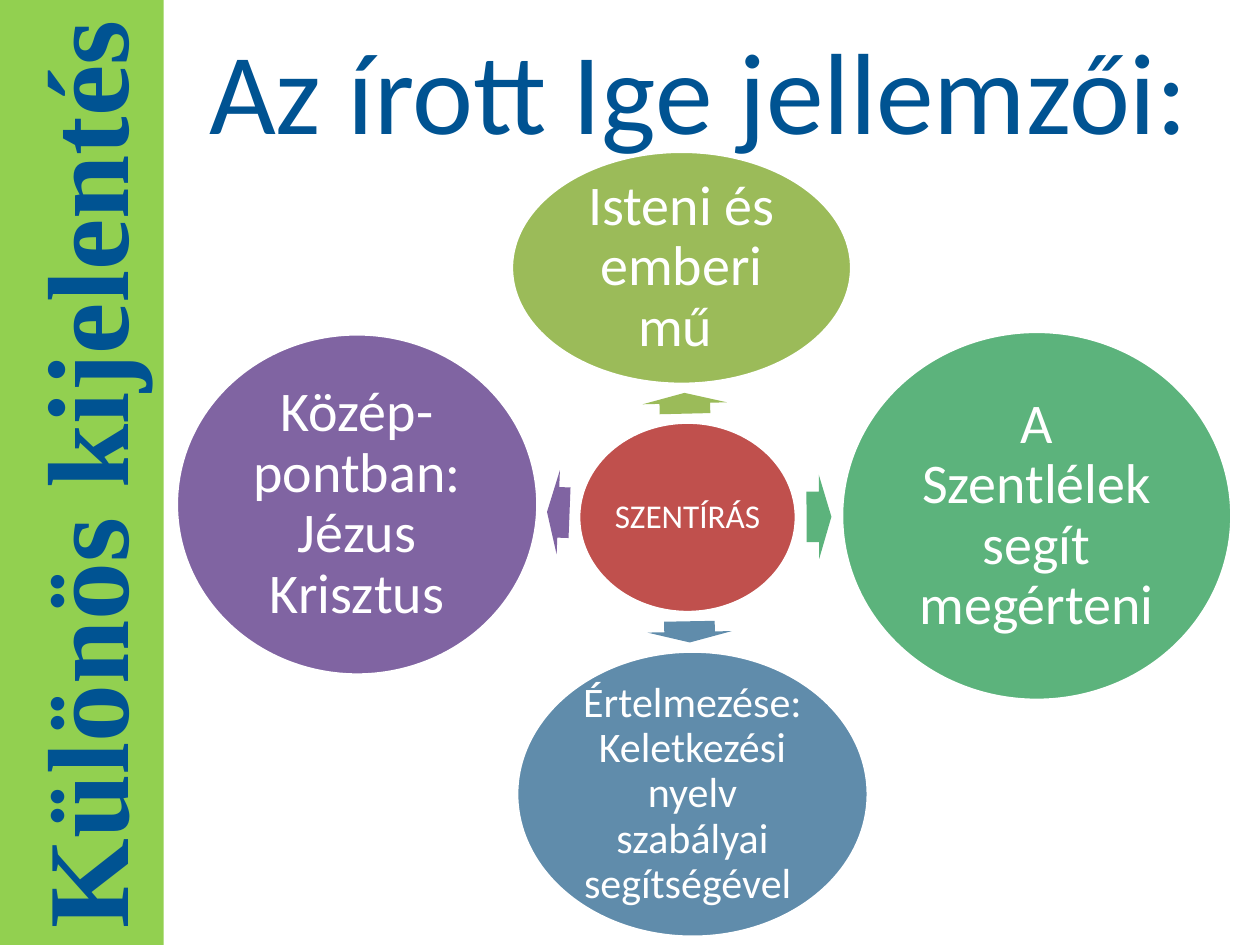
import math
from pptx import Presentation
from pptx.dml.color import RGBColor
from pptx.enum.shapes import MSO_SHAPE
from pptx.enum.text import MSO_ANCHOR, PP_ALIGN
from pptx.util import Cm, Pt

RECT, OVAL, ARROW = MSO_SHAPE.RECTANGLE, MSO_SHAPE.OVAL, MSO_SHAPE.RIGHT_ARROW
MIDDLE, CENTER = MSO_ANCHOR.MIDDLE, PP_ALIGN.CENTER
TITLE_ONLY = 5

COLORS = {
    "lime": "92D050", "navy": "005392", "white": "FFFFFF", "red": "C0504D",
    "olive": "9BBB59", "green": "5CB37C", "blue": "608CAB", "purple": "8064A2",
}

# Centre x, centre y, width, height in cm within the diagram; text, size, colour
HUB = (10.56, 7.38, 4.39, 3.84, "SZENTÍRÁS", 19, "red")
SATELLITES = [
    (10.44, 2.35, 6.86, 4.7, "Isteni és emberi mű ", 32, "olive"),
    (17.6, 7.35, 7.87, 7.44, "A Szentlélek segít megérteni", 32, "green"),
    (10.66, 12.96, 7.09, 5.77,
     "Értelmezése: Keletkezési nyelv szabályai segítségével ", 24, "blue"),
    (3.9, 7.12, 7.29, 6.88, "Közép-pontban: Jézus Krisztus", 32, "purple"),
]


def rgb(name):
    return RGBColor.from_string(COLORS[name])


def add_filled(s, kind, box, color):
    sp = s.shapes.add_shape(kind, *(Cm(v) for v in box))
    sp.shadow.inherit = False
    sp.fill.solid()
    sp.fill.fore_color.rgb = rgb(color)
    sp.line.fill.background()
    return sp


def write(tf, text, size, color, font="Calibri", bold=False):
    tf.word_wrap = True
    tf.vertical_anchor = MIDDLE
    p = tf.paragraphs[0]
    p.alignment = CENTER
    r = p.add_run()
    r.text = text
    r.font.size, r.font.name, r.font.bold = Pt(size), font, bold
    r.font.color.rgb = rgb(color)
    return p


def add_sidebar(s, box):
    sp = add_filled(s, RECT, box, "lime")
    sp.rotation = 180
    write(sp.text_frame, "Különös kijelentés", 66, "navy", "Times New Roman", True)
    sp.text_frame._txBody.bodyPr.set("vert", "vert")


def add_title(s, box):
    sp = s.shapes.title
    sp.left, sp.top, sp.width, sp.height = (Cm(v) for v in box)
    write(sp.text_frame, "Az írott Ige jellemzői: ", 66, "navy")


def add_bubble(s, left, top, bubble):
    cx, cy, w, h, text, size, color = bubble
    sp = add_filled(s, OVAL, (left + cx - w / 2, top + cy - h / 2, w, h), color)
    sp.line.color.rgb = rgb("white")
    sp.line.width = Pt(2)
    tf = sp.text_frame
    tf.margin_left = tf.margin_right = tf.margin_top = tf.margin_bottom = Cm(0.08)
    write(tf, text, size, "white").line_spacing = 0.9


def radius(bubble, angle):
    """Distance from an ellipse's centre to its edge in one direction."""
    a, b = bubble[2] / 2, bubble[3] / 2
    return a * b / math.hypot(b * math.cos(angle), a * math.sin(angle))


def add_arrow(s, left, top, hub, satellite):
    """Arrow centred in the gap between hub and satellite."""
    dx, dy = satellite[0] - hub[0], satellite[1] - hub[1]
    angle = math.atan2(dy, dx)
    start = radius(hub, angle)
    end = math.hypot(dx, dy) - radius(satellite, angle)
    mid, length, breadth = (start + end) / 2, 0.55 * (end - start), 1.7
    x = left + hub[0] + mid * math.cos(angle)
    y = top + hub[1] + mid * math.sin(angle)
    box = (x - length / 2, y - breadth / 2, length, breadth)
    sp = add_filled(s, ARROW, box, satellite[6])
    sp.adjustments[0], sp.adjustments[1] = 0.6, 0.5
    sp.rotation = math.degrees(angle) % 360


def add_diagram(s, left, top):
    add_bubble(s, left, top, HUB)
    for satellite in SATELLITES:
        add_arrow(s, left, top, HUB, satellite)
        add_bubble(s, left, top, satellite)


def main():
    prs = Presentation()
    prs.slide_width, prs.slide_height = Cm(25.4), Cm(19.05)
    s = prs.slides.add_slide(prs.slide_layouts[TITLE_ONLY])
    add_sidebar(s, (0, 0, 3.3, 19.13))
    add_title(s, (3.3, 0, 22.1, 3.56))
    add_diagram(s, 3.3, 3.05)
    prs.save("out.pptx")


if __name__ == "__main__":
    main()
